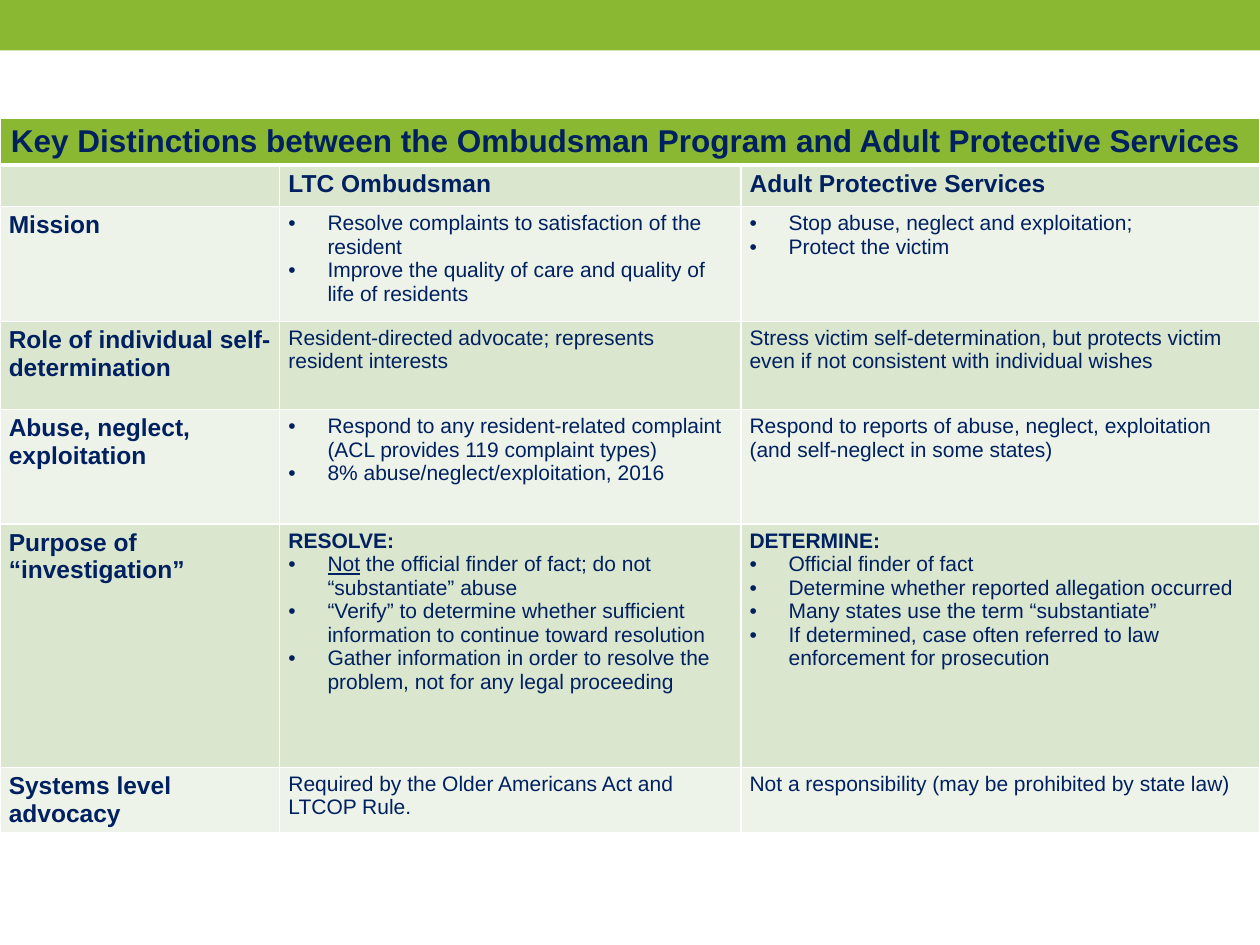
from lxml import etree
from pptx import Presentation
from pptx.dml.color import RGBColor
from pptx.enum import shapes, text
from pptx.oxml import ns
from pptx.util import Inches, Pt

GREEN = RGBColor(0x8A, 0xB8, 0x33)
NAVY = RGBColor(0x00, 0x20, 0x60)
WHITE = RGBColor(0xFF, 0xFF, 0xFF)
BANDS = [RGBColor(0xDA, 0xE6, 0xCE), RGBColor(0xED, 0xF3, 0xE8)]

COLS = [2.22, 3.66, 4.12]
ROWS = [0.37, 0.33, 0.91, 0.7, 0.91, 1.93, 0.52]
TITLE = "Key Distinctions between the Ombudsman Program and Adult Protective Services "
HEADS = ["", "LTC Ombudsman", "Adult Protective Services"]

# Leading "•" makes a bullet, leading "#" a bold line; _word_ is underlined.
BODY = [
    ("Mission",
     ["•Resolve complaints to satisfaction of the resident",
      "•Improve the quality of care and quality of life of residents"],
     ["•Stop abuse, neglect and exploitation;",
      "•Protect the victim"]),
    ("Role of individual self-determination",
     ["Resident-directed advocate; represents resident interests"],
     ["Stress victim self-determination, but protects victim even if not "
      "consistent with individual wishes"]),
    ("Abuse, neglect, exploitation",
     ["•Respond to any resident-related complaint (ACL provides 119 complaint types)",
      "•8% abuse/neglect/exploitation, 2016"],
     ["Respond to reports of abuse, neglect, exploitation (and self-neglect "
      "in some states)"]),
    ("Purpose of “investigation”",
     ["#RESOLVE:",
      "•_Not_ the official finder of fact; do not “substantiate” abuse",
      "•“Verify” to determine whether sufficient information to continue "
      "toward resolution",
      "•Gather information in order to resolve the problem, not for any "
      "legal proceeding"],
     ["#DETERMINE:",
      "•Official finder of fact",
      "•Determine whether reported allegation occurred",
      "•Many states use the term “substantiate”",
      "•If determined, case often referred to law enforcement for prosecution"]),
    ("Systems level advocacy",
     ["Required by the Older Americans Act and LTCOP Rule."],
     ["Not a responsibility (may be prohibited by state law)"]),
]


def add_node(parent, tag, **attrs):
    return etree.SubElement(parent, ns.qn("a:" + tag), **attrs)


def add_bar(slide):
    bar = slide.shapes.add_shape(
        shapes.MSO_SHAPE.RECTANGLE, 0, 0, Inches(10), Inches(0.4))
    bar.shadow.inherit = False
    bar.fill.solid()
    bar.fill.fore_color.rgb = GREEN
    bar.line.fill.background()


def style_cell(cell, fill, base=1):
    """Set margins, white borders (the bottom one base points wide) and fill."""
    cell.margin_left = cell.margin_right = Inches(0.07)
    cell.margin_top = cell.margin_bottom = Inches(0.04)
    props = cell._tc.get_or_add_tcPr()
    for side in "LRTB":
        width = Pt(base if side == "B" else 1)
        line = add_node(props, "ln" + side, w=str(width))
        add_node(add_node(line, "solidFill"), "srgbClr", val=str(WHITE))
    cell.fill.solid()
    cell.fill.fore_color.rgb = fill


def add_bullet(para):
    props = para._p.get_or_add_pPr()
    props.set("marL", str(Inches(0.31)))
    props.set("indent", str(-Inches(0.31)))
    add_node(props, "buFont", typeface="Arial")
    add_node(props, "buChar", char="•")


def write_line(para, line, size, bold):
    if line.startswith("•"):
        add_bullet(para)
    bold = bold or line.startswith("#")
    for i, part in enumerate(line.lstrip("•#").split("_")):
        if not part:
            continue
        run = para.add_run()
        run.text = part
        font = run.font
        font.name, font.size, font.bold = "Arial", Pt(size), bold
        font.color.rgb = NAVY
        if i % 2:
            font.underline = True
    if not line:
        add_node(para._p, "endParaRPr", sz=str(size * 100))


def write_cell(cell, lines, size, bold=False):
    frame = cell.text_frame
    for i, line in enumerate(lines):
        para = frame.add_paragraph() if i else frame.paragraphs[0]
        write_line(para, line, size, bold)


def add_grid(slide):
    frame = slide.shapes.add_table(
        len(ROWS), len(COLS), 0, Inches(0.94), Inches(sum(COLS)), Inches(sum(ROWS)))
    table = frame.table
    for col, width in zip(table.columns, COLS):
        col.width = Inches(width)
    for row, height in zip(table.rows, ROWS):
        row.height = Inches(height)

    for cell in table.rows[0].cells:
        style_cell(cell, GREEN, base=3)
    top = table.cell(0, 0)
    top.merge(table.cell(0, len(COLS) - 1))
    write_cell(top, [TITLE], 18, True)
    top.text_frame.paragraphs[0].alignment = text.PP_ALIGN.CENTER

    for r in range(1, len(ROWS)):
        for cell in table.rows[r].cells:
            style_cell(cell, BANDS[(r - 1) % 2])
    for c, head in enumerate(HEADS):
        write_cell(table.cell(1, c), [head], 14, True)
    for r, (label, *notes) in enumerate(BODY, 2):
        write_cell(table.cell(r, 0), [label], 14, True)
        for c, lines in enumerate(notes, 1):
            write_cell(table.cell(r, c), lines, 12)


def main():
    deck = Presentation()
    deck.slide_width, deck.slide_height = Inches(10), Inches(7.5)
    slide = deck.slides.add_slide(deck.slide_layouts[6])
    add_bar(slide)
    add_grid(slide)
    deck.save("out.pptx")


if __name__ == "__main__":
    main()
